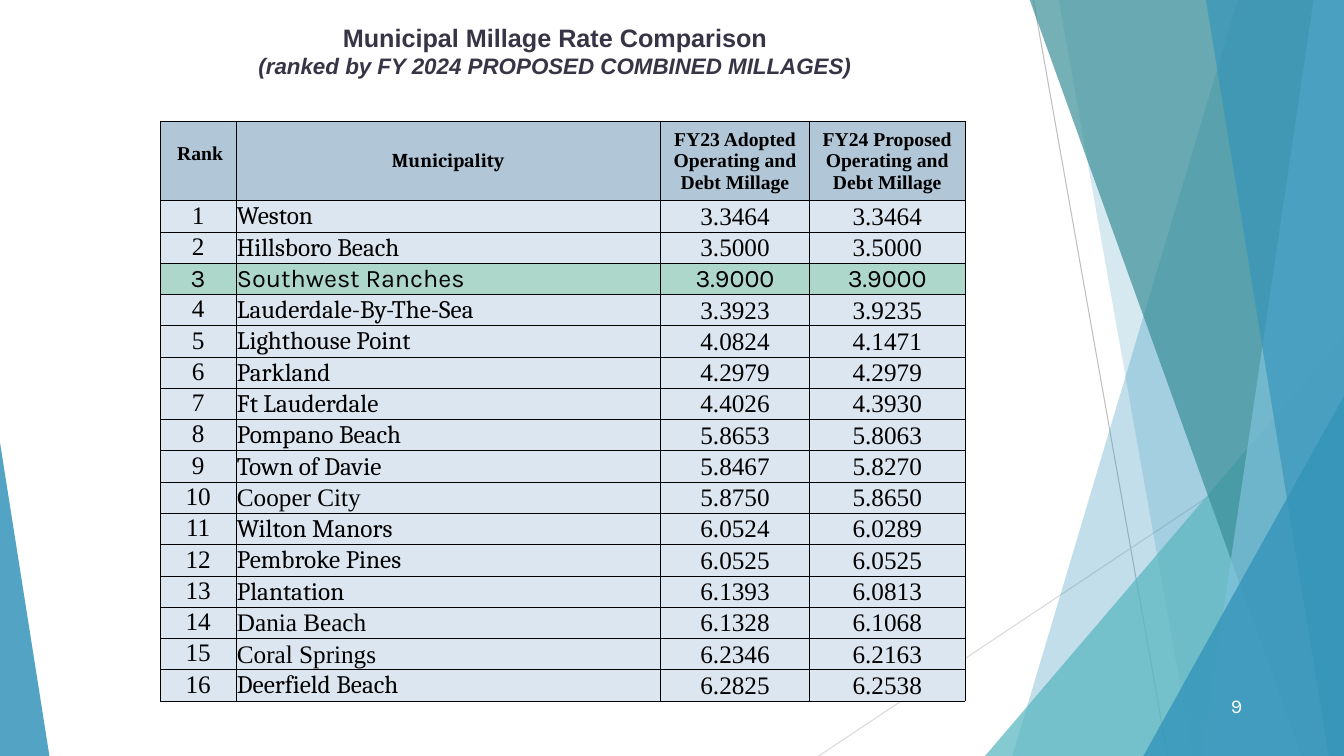
from dataclasses import dataclass

from lxml import etree
from pptx import Presentation
from pptx.dml.color import RGBColor
from pptx.enum.shapes import MSO_CONNECTOR, MSO_SHAPE
from pptx.enum.text import MSO_ANCHOR, MSO_AUTO_SIZE, PP_ALIGN
from pptx.oxml import parse_xml
from pptx.oxml.ns import nsdecls, qn
from pptx.util import Pt

PX = 9144  # EMU per px, 100 px to the inch
WIDTH, HEIGHT = 1333, 750
STRAIGHT = MSO_CONNECTOR.STRAIGHT
TRIANGLE = MSO_SHAPE.ISOSCELES_TRIANGLE
TOP, MIDDLE = MSO_ANCHOR.TOP, MSO_ANCHOR.MIDDLE
LEFT, CENTER, RIGHT = PP_ALIGN.LEFT, PP_ALIGN.CENTER, PP_ALIGN.RIGHT
NO_AUTOFIT = MSO_AUTO_SIZE.NONE
SERIF, ROMAN, SANS = "Cambria", "Times New Roman", "Karla"
BLUE, BLACK = "3494BA", "000000"
HEADER_FILL, ROW_FILL, HIGHLIGHT_FILL = "B1C6D7", "DCE6F1", "ACD7CA"


@dataclass
class Ray:
    start: tuple[int, int]
    end: tuple[int, int]
    color: str


@dataclass
class Pane:
    """Full-height band that reaches the right edge of the slide."""
    top_x: int
    bottom_x: int
    color: str
    alpha: int


@dataclass
class Wedge:
    """Right triangle standing on the bottom edge of the slide."""
    left: int
    top: int
    width: int
    apex: int
    color: str
    alpha: int


@dataclass
class Municipality:
    name: str
    fy23: str
    fy24: str
    name_font: str = SERIF
    font: str = ROMAN
    fill: str = ROW_FILL


RAYS = [
    Ray((1025, 0), (1158, 750), "BFBFBF"),
    Ray((1333, 403), (812, 750), "D9D9D9"),
]
DECOR = [
    Pane(1228, 1004, BLUE, 30),
    Pane(1050, 1183, BLUE, 20),
    Wedge(977, 333, 356, 1, "58B6C0", 72),
    Pane(1021, 1291, "3A8F98", 70),
    Pane(1303, 1192, "7FC1DB", 70),
    Pane(1196, 1318, BLUE, 65),
    Wedge(1134, 393, 199, 1, BLUE, 80),
    Wedge(0, 439, 49, 0, BLUE, 85),
]
COLUMNS = [75, 421, 148, 154]
HEADER_HEIGHT, ROW_HEIGHT = 79, 31
HEADERS = [
    ("Rank", ROMAN),
    ("Municipality", SERIF),
    ("FY23 Adopted Operating and Debt Millage", ROMAN),
    ("FY24 Proposed Operating and Debt Millage", ROMAN),
]
MUNICIPALITIES = [
    Municipality("Weston", "3.3464", "3.3464"),
    Municipality("Hillsboro Beach", "3.5000", "3.5000"),
    Municipality("Southwest Ranches", "3.9000", "3.9000", SANS, SANS, HIGHLIGHT_FILL),
    Municipality("Lauderdale-By-The-Sea", "3.3923", "3.9235"),
    Municipality("Lighthouse Point", "4.0824", "4.1471"),
    Municipality("Parkland", "4.2979", "4.2979"),
    Municipality("Ft Lauderdale", "4.4026", "4.3930"),
    Municipality("Pompano Beach", "5.8653", "5.8063"),
    Municipality("Town of Davie", "5.8467", "5.8270"),
    Municipality("Cooper City", "5.8750", "5.8650", ROMAN),
    Municipality("Wilton Manors", "6.0524", "6.0289"),
    Municipality("Pembroke Pines", "6.0525", "6.0525"),
    Municipality("Plantation", "6.1393", "6.0813"),
    Municipality("Dania Beach", "6.1328", "6.1068", ROMAN),
    Municipality("Coral Springs", "6.2346", "6.2163", ROMAN),
    Municipality("Deerfield Beach", "6.2825", "6.2538"),
]


def rgb(color: str) -> RGBColor:
    return RGBColor.from_string(color)


def px(*lengths: int) -> list[int]:
    return [length * PX for length in lengths]


def style(p, size: int, font: str, color: str, align, bold=False, italic=False) -> None:
    p.alignment = align
    p.font.size, p.font.name = Pt(size), font
    p.font.bold, p.font.italic = bold, italic
    p.font.color.rgb = rgb(color)


def draw_ray(slide, ray: Ray) -> None:
    line = slide.shapes.add_connector(STRAIGHT, *px(*ray.start, *ray.end))
    line.line.color.rgb = rgb(ray.color)
    line.line.width = Pt(0.75)
    etree.SubElement(line._element.spPr, qn("a:effectLst"))


def draw_decor(slide, part: Pane | Wedge) -> None:
    if isinstance(part, Pane):
        outline = slide.shapes.build_freeform(part.top_x, -1, scale=PX)
        outline.add_line_segments(
            [(WIDTH, -1), (WIDTH, HEIGHT), (part.bottom_x, HEIGHT)], close=True)
        sp = outline.convert_to_shape()
    else:
        sp = slide.shapes.add_shape(
            TRIANGLE, *px(part.left, part.top, part.width, HEIGHT - part.top))
        sp.adjustments[0] = part.apex
    sp.shadow.inherit = False
    sp.line.fill.background()
    sp.fill.solid()
    sp.fill.fore_color.rgb = rgb(part.color)
    color = sp._element.spPr.find(qn("a:solidFill"))[0]
    etree.SubElement(color, qn("a:alpha"), val=str(part.alpha * 1000))


def fill_cell(cell, text: str, size: int, font: str, fill: str,
              align=CENTER, anchor=MIDDLE, bold=False) -> None:
    cell.margin_left, cell.margin_right, cell.margin_top, cell.margin_bottom = px(1, 1, 1, 0)
    cell.vertical_anchor = anchor
    cell.text = text
    style(cell.text_frame.paragraphs[0], size, font, BLACK, align, bold)
    cell.fill.solid()
    cell.fill.fore_color.rgb = rgb(fill)
    for i, side in enumerate(("lnL", "lnR", "lnT", "lnB")):
        border = parse_xml(
            f'<a:{side} {nsdecls("a")} w="6350"><a:solidFill>'
            f'<a:srgbClr val="{BLACK}"/></a:solidFill></a:{side}>')
        cell._tc.get_or_add_tcPr().insert(i, border)


def draw_table(slide) -> None:
    height = HEADER_HEIGHT + ROW_HEIGHT * len(MUNICIPALITIES)
    table = slide.shapes.add_table(
        len(MUNICIPALITIES) + 1, len(COLUMNS), *px(159, 120, sum(COLUMNS), height)).table
    table.first_row = table.horz_banding = False
    for column, width in zip(table.columns, COLUMNS):
        column.width = width * PX
    for row in table.rows:
        row.height = ROW_HEIGHT * PX
    table.rows[0].height = HEADER_HEIGHT * PX

    for col, (text, font) in enumerate(HEADERS):
        fill_cell(table.cell(0, col), text, 14, font, HEADER_FILL, bold=True)
    # The rank heading sits a little above the middle and to the right
    rank = table.cell(0, 0)
    rank.vertical_anchor = TOP
    rank.margin_left, rank.margin_top = px(5, 22)

    for row, m in enumerate(MUNICIPALITIES, start=1):
        fill_cell(table.cell(row, 0), str(row), 18, m.font, m.fill, anchor=TOP)
        fill_cell(table.cell(row, 1), m.name, 18, m.name_font, m.fill, align=LEFT)
        for col, rate in enumerate((m.fy23, m.fy24), start=2):
            fill_cell(table.cell(row, col), rate, 18, m.font, m.fill)


def draw_title(slide) -> None:
    title = slide.shapes.title
    title.left, title.top, title.width, title.height = px(126, 17, 849, 67)
    tf = title.text_frame
    tf.word_wrap, tf.auto_size, tf.vertical_anchor = True, NO_AUTOFIT, TOP
    tf.text = "Municipal Millage Rate Comparison\n(ranked by FY 2024 PROPOSED COMBINED MILLAGES)"
    heading, ranking = tf.paragraphs
    style(heading, 18, "Arial", "373545", CENTER, bold=True)
    style(ranking, 16, "Arial", "373545", CENTER, bold=True, italic=True)


def draw_page_number(slide) -> None:
    tf = slide.shapes.add_textbox(*px(1167, 680, 75, 40)).text_frame
    tf.word_wrap, tf.vertical_anchor = True, MIDDLE
    tf.text = "9"
    style(tf.paragraphs[0], 14, SANS, "FFFFFF", RIGHT)


def main() -> None:
    prs = Presentation()
    prs.slide_width, prs.slide_height = px(WIDTH, HEIGHT)
    slide = prs.slides.add_slide(prs.slide_layouts[5])
    # Background decoration
    for ray in RAYS:
        draw_ray(slide, ray)
    for part in DECOR:
        draw_decor(slide, part)
    # Content
    draw_title(slide)
    draw_page_number(slide)
    draw_table(slide)
    prs.save("out.pptx")


if __name__ == "__main__":
    main()
